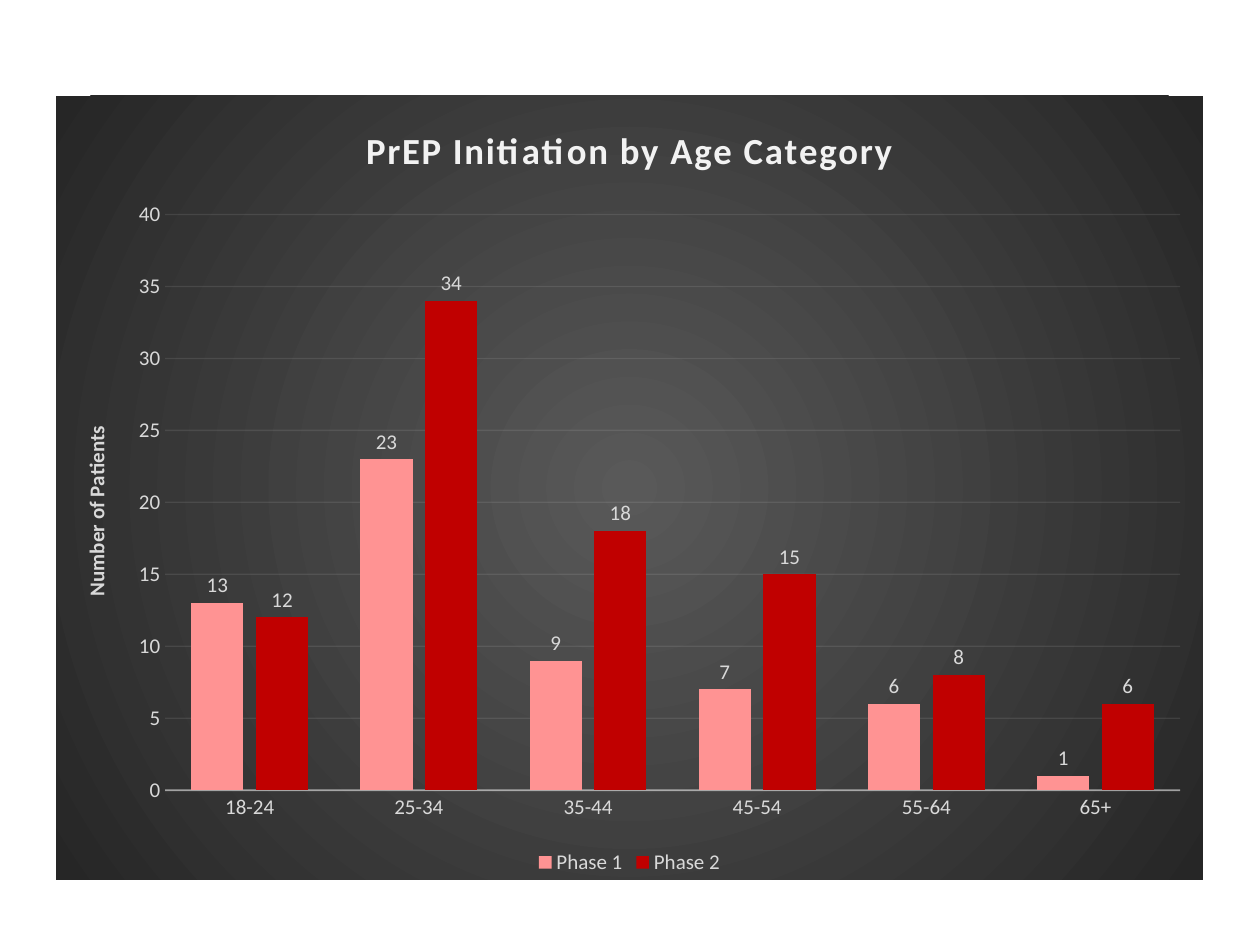
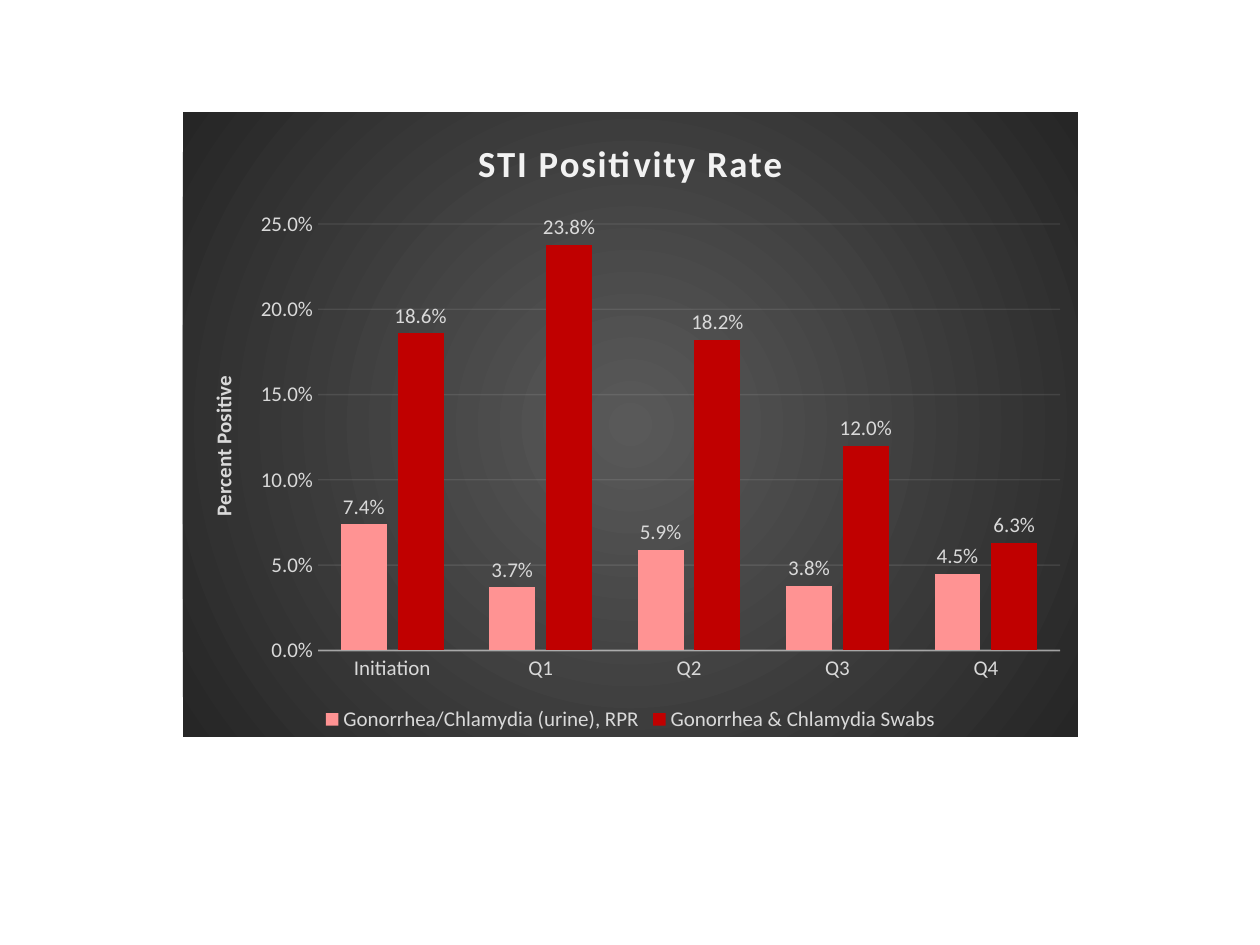
"""Build two slides with dark column charts on PrEP initiation and STI positivity."""
import lxml.etree
import pptx
import pptx.chart.data
import pptx.dml.color
import pptx.enum.chart
import pptx.oxml
import pptx.oxml.ns
import pptx.util

PX = 914400 / 126
RGB = pptx.dml.color.RGBColor
PINK = RGB(0xFF, 0x93, 0x93)
RED = RGB(0xC0, 0x00, 0x00)
PALE = RGB(0xF2, 0xF2, 0xF2)
SILVER = RGB(0xD9, 0xD9, 0xD9)
GRAY = RGB(0x59, 0x59, 0x59)
CHARCOAL = RGB(0x26, 0x26, 0x26)
BODY = {"name": "Calibri", "size": pptx.util.Pt(12), "bold": False}
AXIS_TITLE = {**BODY, "bold": True}
TITLE = {**AXIS_TITLE, "size": pptx.util.Pt(21)}
XL = pptx.enum.chart
qn = pptx.oxml.ns.qn


def emu(px):
    return pptx.util.Emu(round(px * PX))


class Deck:
    """Hold the presentation, its style and the current slide."""

    def __init__(self, width, height):
        self.prs = pptx.Presentation()
        self.prs.slide_width, self.prs.slide_height = emu(width), emu(height)
        self.s = None

    def slide(self):
        self.s = self.prs.slides.add_slide(self.prs.slide_layouts[6])

    def font(self, font, style, color):
        for key, value in style.items():
            setattr(font, key, value)
        font.color.rgb = color

    def title(self, owner, text, style, color):
        tf = owner.text_frame
        tf.text = text
        r = tf.paragraphs[0].runs[0]
        self.font(r.font, style, color)
        return tf, r

    def line(self, line, width, alpha):
        line.color.rgb = PALE
        line.width = pptx.util.Pt(width)
        clr = line.fill._xPr.find(".//" + qn("a:srgbClr"))
        lxml.etree.SubElement(clr, qn("a:alpha"), val=str(alpha * 1000))

    def backdrop(self, chart):
        stops = "".join(
            f'<a:gs pos="{pos}"><a:srgbClr val="{color}"/></a:gs>'
            for pos, color in ((0, GRAY), (100000, CHARCOAL)))
        sp_pr = pptx.oxml.parse_xml(
            f'<c:spPr {pptx.oxml.ns.nsdecls("c", "a")}><a:gradFill><a:gsLst>{stops}</a:gsLst>'
            '<a:path path="circle"><a:fillToRect l="50000" t="50000" r="50000" b="50000"/>'
            '</a:path></a:gradFill><a:ln><a:noFill/></a:ln></c:spPr>')
        chart._chartSpace.find(qn("c:chart")).addnext(sp_pr)

    def axes(self, chart, label, top, step, fmt):
        cat, val = chart.category_axis, chart.value_axis
        for axis in (cat, val):
            axis.major_tick_mark = axis.minor_tick_mark = XL.XL_TICK_MARK.NONE
            self.font(axis.tick_labels.font, BODY, SILVER)
        self.line(cat.format.line, 1, 54)
        val.format.line.fill.background()
        val.has_major_gridlines = True
        self.line(val.major_gridlines.format.line, 0.75, 10)
        for key, value in {"minimum_scale": 0, "maximum_scale": top, "major_unit": step}.items():
            setattr(val, key, value)
        val.tick_labels.number_format = fmt
        val.tick_labels.number_format_is_linked = False
        tf, _ = self.title(val.axis_title, label, AXIS_TITLE, SILVER)
        body = tf._txBody.find(qn("a:bodyPr"))
        body.set("rot", "-5400000")
        body.set("vert", "horz")

    def series(self, plot, fmt):
        plot.gap_width, plot.overlap, plot.vary_by_categories = 100, -24, False
        for ser, color in zip(plot.series, (PINK, RED)):
            ser.format.fill.solid()
            ser.format.fill.fore_color.rgb = color
            ser.invert_if_negative = False
            labels = ser.data_labels
            style = {"show_value": True, "position": XL.XL_LABEL_POSITION.OUTSIDE_END,
                     "number_format": fmt, "number_format_is_linked": False}
            for key, value in style.items():
                setattr(labels, key, value)
            self.font(labels.font, BODY, SILVER)

    def columns(self, box, title, label, cats, data, top, step, fmt="General"):
        cd = pptx.chart.data.CategoryChartData(number_format=fmt)
        cd.categories = cats
        for name, values in data.items():
            cd.add_series(name, values)
        chart = self.s.shapes.add_chart(
            XL.XL_CHART_TYPE.COLUMN_CLUSTERED, *map(emu, box), cd).chart
        self.font(chart.font, BODY, SILVER)
        self.backdrop(chart)
        _, r = self.title(chart.chart_title, title, TITLE, PALE)
        r._r.get_or_add_rPr().set("spc", "100")
        chart.chart_title.include_in_layout = False
        self.axes(chart, label, top, step, fmt)
        self.series(chart.plots[0], fmt)
        chart.has_legend = True
        chart.legend.position = XL.XL_LEGEND_POSITION.BOTTOM
        chart.legend.include_in_layout = False
        self.font(chart.legend.font, BODY, SILVER)


def main():
    deck = Deck(1260, 945)
    deck.slide()
    deck.columns(
        (56, 96, 1147, 784), "PrEP Initiation by Age Category", "Number of Patients",
        ["18-24", "25-34", "35-44", "45-54", "55-64", "65+"],
        {"Phase 1": [13, 23, 9, 7, 6, 1], "Phase 2": [12, 34, 18, 15, 8, 6]}, 40, 5)
    deck.slide()
    deck.columns(
        (183, 112, 895, 625), "STI Positivity Rate", "Percent Positive",
        ["Initiation", "Q1", "Q2", "Q3", "Q4"],
        {"Gonorrhea/Chlamydia (urine), RPR": [0.074, 0.037, 0.059, 0.038, 0.045],
         "Gonorrhea & Chlamydia Swabs": [0.186, 0.238, 0.182, 0.12, 0.063]},
        0.25, 0.05, "0.0%")
    deck.prs.save("out.pptx")


if __name__ == "__main__":
    main()
